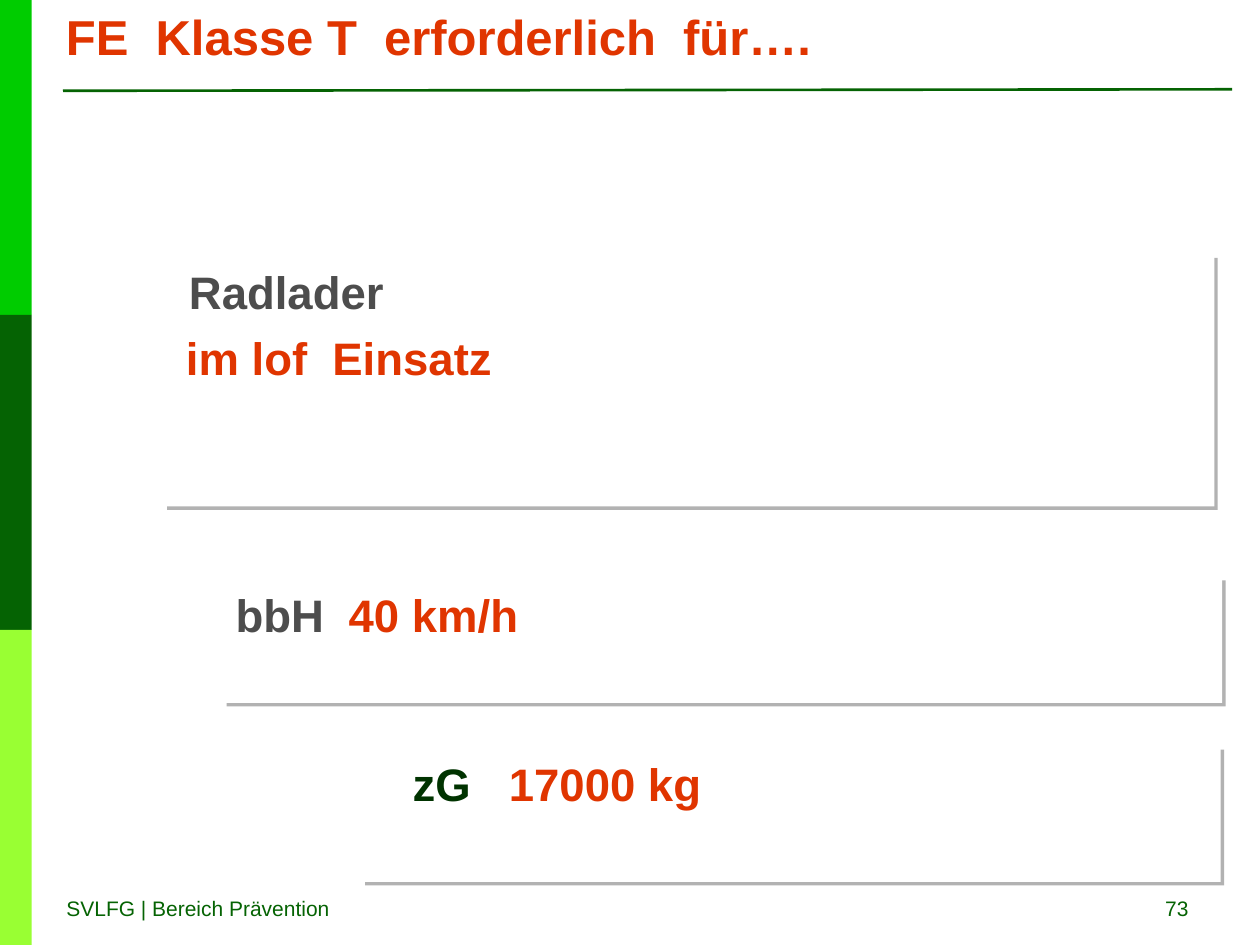
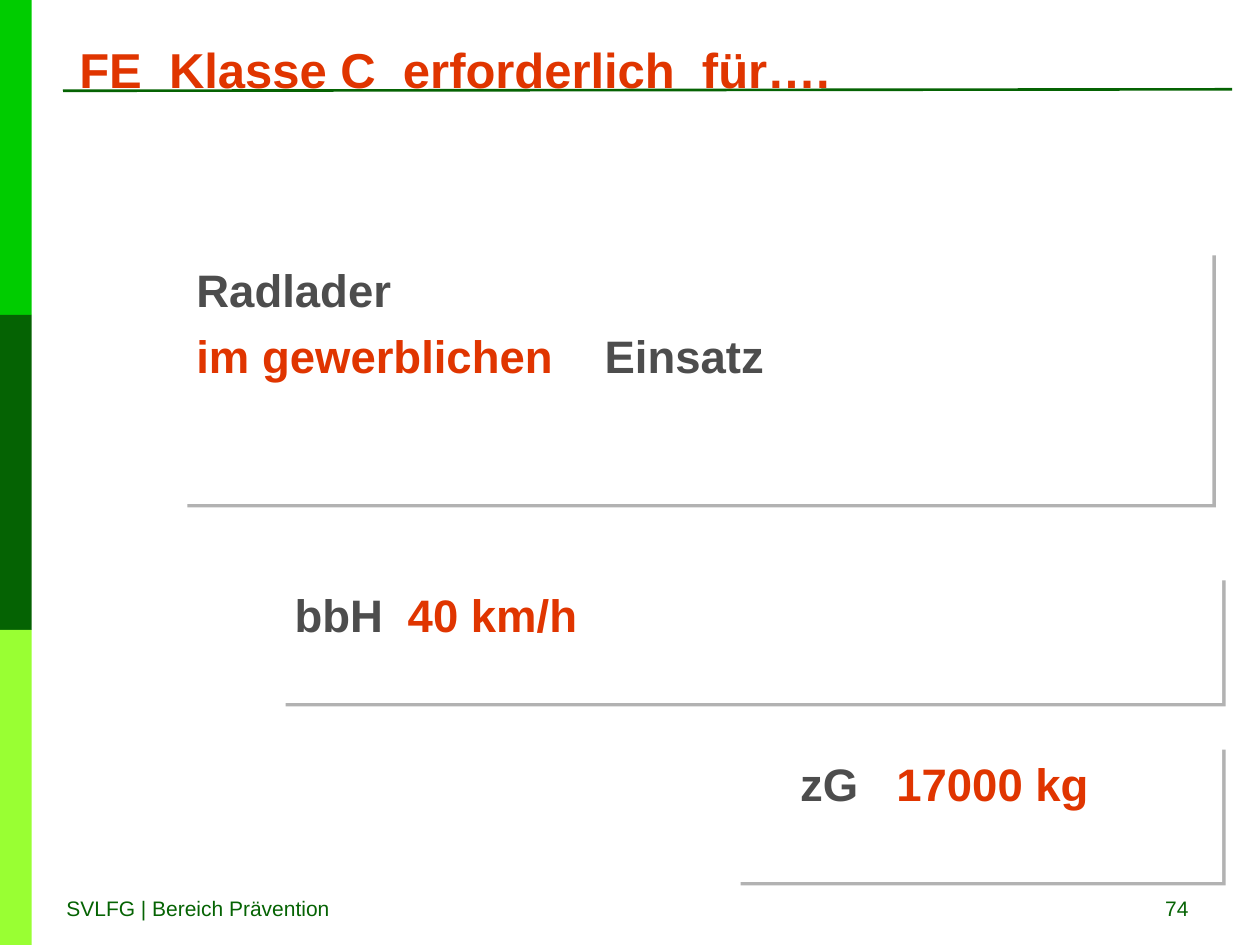
from lxml.etree import SubElement
from pptx import Presentation
from pptx.dml.color import RGBColor
from pptx.enum.shapes import MSO_CONNECTOR, MSO_SHAPE
from pptx.enum.text import MSO_ANCHOR, MSO_AUTO_SIZE, PP_ALIGN
from pptx.oxml.ns import qn
from pptx.util import Cm, Pt

LIME = RGBColor(0x00, 0xCC, 0x00)
GREEN = RGBColor(0x05, 0x63, 0x03)
PALE = RGBColor(0x99, 0xFF, 0x33)
RED = RGBColor(0xE0, 0x35, 0x00)
GREY = RGBColor(0x4D, 0x4D, 0x4D)
DARK = RGBColor(0x00, 0x33, 0x00)
WHITE = RGBColor(0xFF, 0xFF, 0xFF)
SHADOW = RGBColor(0xB2, 0xB2, 0xB2)
FONT = "Arial"
FIRST_PAGE = 73
INSET = 0.25

SPEED = [(0, 2.28, [("bbH\t", GREY), ("40 km/h", RED)])]

SLIDES = [
    {
        "title": ("FE  Klasse T  erforderlich  für….", (0.84, 0, 23.7, 2.54), 0.49, MSO_ANCHOR.TOP),
        "cards": [
            ((3.3, 5.13, 21.18, 5.08), 0.45,
             [(0.06, 0, [("Radlader", GREY)]), (0, 0, [("im lof  Einsatz", RED)])]),
            ((7.29, 15.04, 17.32, 2.74), 1.03,
             [(0, 1.94, [("zG\t", DARK), ("17000 kg", RED)])]),
            ((4.5, 11.63, 20.14, 2.54), INSET, SPEED),
        ],
    },
    {
        "title": ("FE  Klasse C  erforderlich  für….", (0.84, 0.43, 23.7, 1.9), 0.76, MSO_ANCHOR.MIDDLE),
        "cards": [
            ((3.71, 5.08, 20.73, 5.08), INSET,
             [(0, 0, [("Radlader", GREY)]),
              (0, 8.23, [("im gewerblichen\t", RED), ("Einsatz", GREY)])]),
            ((14.86, 15.04, 9.78, 2.74), 1.27,
             [(0, 1.94, [("zG\t", GREY), ("17000 kg", RED)])]),
            ((5.69, 11.63, 18.95, 2.54), INSET, SPEED),
        ],
    },
]


def cm_box(box):
    """Turn left, top, width and height in centimetres into lengths."""
    return [Cm(v) for v in box]


def add_run(p, text, size, color, bold=False):
    """Append a formatted run to a paragraph."""
    r = p.add_run()
    r.text = text
    r.font.name, r.font.size, r.font.bold = FONT, Pt(size), bold
    r.font.color.rgb = color


def add_rect(s, box, color):
    """Draw a plain filled rectangle."""
    sp = s.shapes.add_shape(MSO_SHAPE.RECTANGLE, *cm_box(box))
    sp.shadow.inherit = False
    sp.fill.solid()
    sp.fill.fore_color.rgb = color
    sp.line.fill.background()
    return sp


def add_bands(s, box):
    """Stack the three green bands in equal parts of the box."""
    left, top, width, height = box
    step = height / 3
    for i, color in enumerate((LIME, GREEN, PALE)):
        add_rect(s, (left, top + i * step, width, step), color)


def add_rule(s):
    """Draw the line under the title."""
    line = s.shapes.add_connector(MSO_CONNECTOR.STRAIGHT, Cm(1.27), Cm(1.83), Cm(24.84), Cm(1.8))
    line.line.color.rgb = GREEN
    line.line.width = Pt(1.5)
    SubElement(line._element.spPr, qn("a:effectLst"))


def add_footer(s, text, box, align):
    """Write one footer entry in its box."""
    tf = s.shapes.add_textbox(*cm_box(box)).text_frame
    tf.word_wrap = True
    p = tf.paragraphs[0]
    p.alignment = align
    add_run(p, text, 12, GREEN)


def add_title(s, text, box, inset, anchor):
    """Place and fill the title placeholder in front of the frame."""
    sp = s.shapes.title
    s.shapes._spTree.append(sp._element)
    sp.left, sp.top, sp.width, sp.height = cm_box(box)
    tf = sp.text_frame
    tf.auto_size, tf.vertical_anchor = MSO_AUTO_SIZE.NONE, anchor
    tf.margin_left = Cm(inset)
    p = tf.paragraphs[0]
    p.alignment = PP_ALIGN.LEFT
    add_run(p, text, 28, RED, True)


def add_shadow(sp):
    """Give a shape a hard grey shadow to the lower right."""
    shadow = SubElement(sp._element.spPr.find(qn("a:effectLst")), qn("a:outerShdw"),
                        dist=str(Pt(2.8)), dir="2700000", algn="ctr", rotWithShape="0")
    SubElement(shadow, qn("a:srgbClr"), val=str(SHADOW))


def add_card(s, box, inset, lines):
    """Draw a white card with its lines of (indent, tab, runs)."""
    sp = add_rect(s, box, WHITE)
    add_shadow(sp)
    tf = sp.text_frame
    tf.word_wrap, tf.vertical_anchor = True, MSO_ANCHOR.TOP
    tf.margin_left, tf.margin_top = Cm(inset), Cm(0.2)
    for i, (indent, tab, runs) in enumerate(lines):
        p = tf.add_paragraph() if i else tf.paragraphs[0]
        p.alignment = PP_ALIGN.LEFT
        if i:
            p.space_before = Pt(6.5)
        pPr = p._p.get_or_add_pPr()
        pPr.set("marL", str(Cm(indent)))
        if tab:
            SubElement(SubElement(pPr, qn("a:tabLst")), qn("a:tab"), pos=str(Cm(tab)), algn="l")
        for text, color in runs:
            add_run(p, text, 26, color, True)


def add_frame(s, page):
    """Draw the bands, rule and footer that all slides share."""
    add_bands(s, (0, 0, 0.64, 19.05))
    add_rule(s)
    add_footer(s, "SVLFG | Bereich Prävention", (1.09, 17.93, 7.01, 0.76), PP_ALIGN.LEFT)
    add_footer(s, str(page), (18.29, 17.93, 5.92, 0.84), PP_ALIGN.RIGHT)


def main():
    """Build and save the slides."""
    prs = Presentation()
    prs.slide_width, prs.slide_height = Cm(25.4), Cm(19.05)
    for page, content in enumerate(SLIDES, FIRST_PAGE):
        s = prs.slides.add_slide(prs.slide_layouts[5])
        add_frame(s, page)
        add_title(s, *content["title"])
        for card in content["cards"]:
            add_card(s, *card)
    prs.save("out.pptx")


if __name__ == "__main__":
    main()
